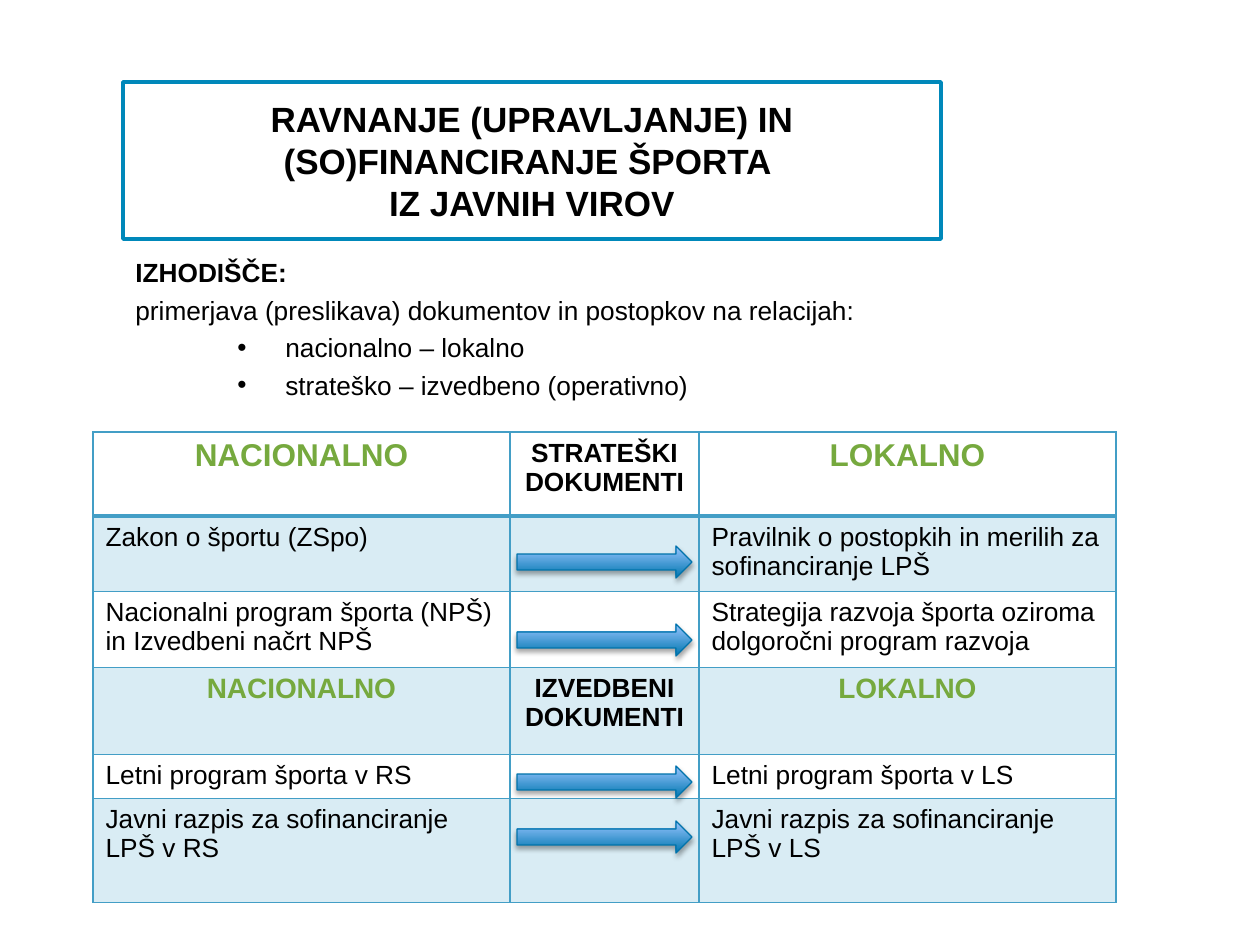
"""Build a slide comparing national and local sports documents."""
from dataclasses import dataclass

from lxml import etree
from pptx import Presentation
from pptx import util as u
from pptx.dml.color import RGBColor
from pptx.enum import shapes, text
from pptx.oxml import ns


@dataclass(frozen=True)
class Theme:
    font: str = "Arial"
    black: str = "000000"
    white: str = "FFFFFF"
    green: str = "76A93E"
    band: str = "D9ECF4"
    grid: str = "439EC6"
    frame: str = "0088BA"
    arrow_line: str = "0073AB"
    arrow_dark: str = "0076AF"
    arrow_light: str = "99C5FF"
    title: int = 20
    heading: int = 18
    subheading: int = 16
    body: int = 15


theme = Theme()
PX = 914400 / 126


def px(*lengths):
    return [u.Emu(round(length * PX)) for length in lengths]


def add_run(paragraph, words, size, color=theme.black, bold=False):
    run = paragraph.add_run()
    run.text = words
    run.font.name = theme.font
    run.font.size = u.Pt(size)
    run.font.bold = bold
    run.font.color.rgb = RGBColor.from_string(color)


presentation = Presentation()
presentation.slide_width, presentation.slide_height = px(1260, 945)
slide = presentation.slides.add_slide(presentation.slide_layouts[5])

title = slide.shapes.title
title.left, title.top, title.width, title.height = px(123, 82, 818, 157)
title.fill.solid()
title.fill.fore_color.rgb = RGBColor.from_string(theme.white)
title.line.color.rgb = RGBColor.from_string(theme.frame)
title.line.width = u.Pt(2)
title.text_frame.vertical_anchor = text.MSO_ANCHOR.MIDDLE
paragraph = title.text_frame.paragraphs[0]
paragraph.alignment = text.PP_ALIGN.CENTER
add_run(paragraph, "RAVNANJE (UPRAVLJANJE) IN (SO)FINANCIRANJE ŠPORTA ", theme.title, bold=True)
paragraph.add_line_break()
add_run(paragraph, "IZ JAVNIH VIROV", theme.title, bold=True)

starting_points = [
    ("IZHODIŠČE:", True, False),
    ("primerjava (preslikava) dokumentov in postopkov na relacijah:", False, False),
    ("nacionalno – lokalno", False, True),
    ("strateško – izvedbeno (operativno)", False, True),
]
frame = slide.shapes.add_textbox(*px(123, 250, 818, 159)).text_frame
frame.word_wrap = True
for index, (words, bold, bulleted) in enumerate(starting_points):
    paragraph = frame.add_paragraph() if index else frame.paragraphs[0]
    if index:
        paragraph.space_before = u.Pt(3.5)
    if bulleted:
        paragraph.level = 1
        properties = paragraph._p.get_or_add_pPr()
        margin, indent = px(150, -48)
        properties.set("marL", str(margin))
        properties.set("indent", str(indent))
        etree.SubElement(properties, ns.qn("a:buFont"), typeface=theme.font)
        etree.SubElement(properties, ns.qn("a:buChar"), char="•")
    add_run(paragraph, words, theme.body, bold=bold)

rows = [
    (84, theme.heading, ("NACIONALNO", "STRATEŠKI DOKUMENTI", "LOKALNO")),
    (70, None, ("Zakon o športu (ZSpo)", "",
                "Pravilnik o postopkih in merilih za sofinanciranje LPŠ")),
    (71, None, ("Nacionalni program športa (NPŠ) in Izvedbeni načrt NPŠ", "",
                "Strategija razvoja športa oziroma dolgoročni program razvoja")),
    (87, theme.subheading, ("NACIONALNO", "IZVEDBENI DOKUMENTI", "LOKALNO")),
    (41, None, ("Letni program športa v RS", "", "Letni program športa v LS")),
    (104, None, ("Javni razpis za sofinanciranje LPŠ v RS", "",
                 "Javni razpis za sofinanciranje LPŠ v LS")),
]
columns = (417, 189, 417)
table = slide.shapes.add_table(
    len(rows), len(columns),
    *px(93, 432, sum(columns), sum(row[0] for row in rows))).table
for column, width in zip(table.columns, px(*columns)):
    column.width = width
for row_index, (height, heading_size, entries) in enumerate(rows):
    table.rows[row_index].height = px(height)[0]
    for column_index, words in enumerate(entries):
        cell = table.cell(row_index, column_index)
        properties = cell._tc.get_or_add_tcPr()
        for side in ("L", "R", "T", "B"):
            heavy = (row_index, side) in ((0, "B"), (1, "T"))
            border = etree.SubElement(properties, ns.qn(f"a:ln{side}"),
                                      w=str(u.Pt(2 if heavy else 1)))
            fill = etree.SubElement(border, ns.qn("a:solidFill"))
            etree.SubElement(fill, ns.qn("a:srgbClr"), val=theme.grid)
        cell.fill.solid()
        cell.fill.fore_color.rgb = RGBColor.from_string(
            theme.band if row_index % 2 else theme.white)
        paragraph = cell.text_frame.paragraphs[0]
        if not words:
            etree.SubElement(paragraph._p, ns.qn("a:endParaRPr"), sz=str(theme.body * 100))
        elif heading_size:
            paragraph.alignment = text.PP_ALIGN.CENTER
            if column_index == 1:
                add_run(paragraph, words, theme.body, bold=True)
            else:
                add_run(paragraph, words, heading_size, theme.green, True)
        else:
            add_run(paragraph, words, theme.body)

for top in (546, 624, 766, 821):
    arrow = slide.shapes.add_shape(shapes.MSO_SHAPE.RIGHT_ARROW, *px(517, top, 175, 32))
    arrow.fill.gradient()
    arrow.fill.gradient_angle = 90
    for stop, color in zip(arrow.fill.gradient_stops, (theme.arrow_dark, theme.arrow_light)):
        stop.color.rgb = RGBColor.from_string(color)
    arrow.line.color.rgb = RGBColor.from_string(theme.arrow_line)
    arrow.line.width = u.Pt(0.75)
    arrow.shadow.inherit = False
    effects = arrow._element.spPr.find(ns.qn("a:effectLst"))
    shadow = etree.SubElement(effects, ns.qn("a:outerShdw"), blurRad=str(u.Pt(3.1)),
                              dist=str(u.Pt(1.8)), dir="5400000", rotWithShape="0")
    shade = etree.SubElement(shadow, ns.qn("a:srgbClr"), val=theme.black)
    etree.SubElement(shade, ns.qn("a:alpha"), val="35000")

presentation.save("out.pptx")
